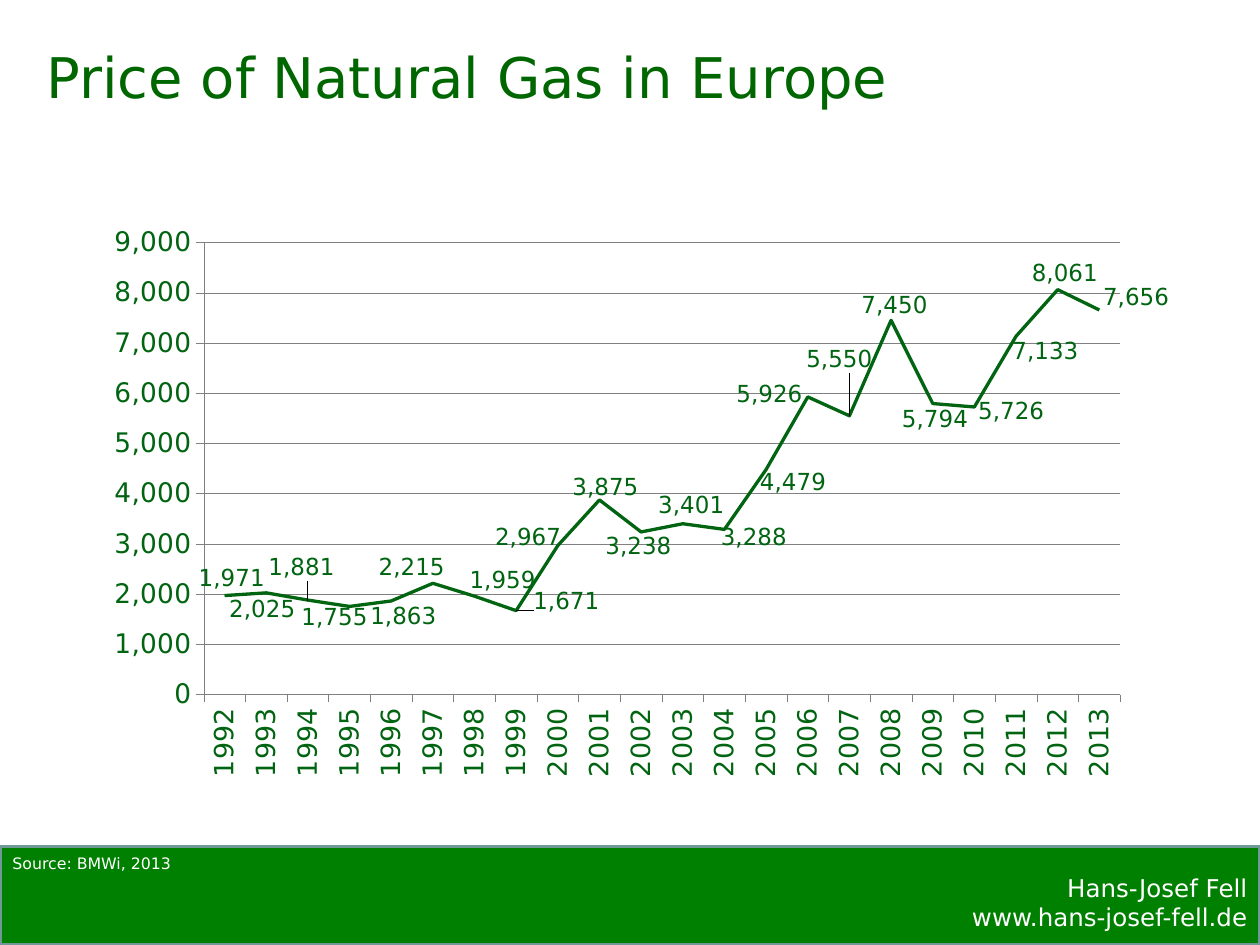
from lxml.etree import SubElement
from pptx import Presentation
from pptx.chart.data import CategoryChartData
from pptx.dml.color import RGBColor
from pptx.enum.chart import XL_CHART_TYPE as ChartType
from pptx.enum.chart import XL_LABEL_POSITION as LabelPosition
from pptx.enum.chart import XL_TICK_MARK as TickMark
from pptx.enum.shapes import MSO_SHAPE as Shape
from pptx.enum.text import MSO_ANCHOR as Anchor
from pptx.enum.text import PP_ALIGN as Align
from pptx.oxml.ns import qn
from pptx.util import Inches, Pt

COLORS = {"footer": "008000", "edge": "709897", "title": "006600",
          "line": "006411", "grid": "808080", "white": "FFFFFF"}
FIRST_YEAR = 1992
CHART_WIDTH, CHART_HEIGHT = 8.42, 4.42
PLOT_AREA = {"x": 0.092, "y": 0.027, "w": 0.884, "h": 0.813}
LABEL_REACH = 0.3  # from a point to the centre of a label on its right

# price, then the label's centre measured from its point, in inches
PRICES = [
    (1971, 0.05, -0.14), (2025, -0.04, 0.13), (1881, -0.06, -0.26),
    (1755, -0.13, 0.08), (1863, 0.09, 0.12), (2215, -0.18, -0.13),
    (1959, 0.22, -0.13), (1671, 0.4, -0.08), (2967, -0.25, -0.07),
    (3875, 0.04, -0.1), (3238, -0.03, 0.11), (3401, 0.06, -0.15),
    (3288, 0.23, 0.06), (4479, 0.21, 0.1), (5926, -0.32, -0.02),
    (5550, -0.09, -0.45), (7450, 0.02, -0.12), (5794, 0.01, 0.12),
    (5726, 0.29, 0.03), (7133, 0.23, 0.12), (8061, 0.05, -0.13),
    (7656, 0.29, -0.1),
]


def color(name):
    return RGBColor.from_string(COLORS[name])


def add_layout(after, inner=False, **fractions):
    """Place a chart part by hand, in fractions of the chart's size."""
    layout = after.makeelement(qn("c:layout"))
    after.addnext(layout)
    manual = SubElement(layout, qn("c:manualLayout"))
    if inner:
        SubElement(manual, qn("c:layoutTarget"), val="inner")
        for mode in ("xMode", "yMode"):
            SubElement(manual, qn(f"c:{mode}"), val="edge")
    for key, value in fractions.items():
        SubElement(manual, qn(f"c:{key}"), val=f"{value:.4f}")


class SlideBuilder:
    def __init__(self, page, font="DejaVu Sans"):
        self.page = page
        self.font = font

    def style(self, font, size, color_name):
        font.name = self.font
        font.size = Pt(size)
        font.bold = False
        font.color.rgb = color(color_name)

    def title(self, text, left, top, width, height):
        box = self.page.shapes.title
        box.left, box.top = Inches(left), Inches(top)
        box.width, box.height = Inches(width), Inches(height)
        frame = box.text_frame
        frame.text = text
        frame.vertical_anchor = Anchor.BOTTOM
        para = frame.paragraphs[0]
        para.alignment = Align.LEFT
        self.style(para.font, 32, "title")

    def bar(self, left, top, width, height):
        bar = self.page.shapes.add_shape(
            Shape.RECTANGLE, Inches(left), Inches(top), Inches(width), Inches(height))
        bar.shadow.inherit = False
        bar.fill.solid()
        bar.fill.fore_color.rgb = color("footer")
        bar.line.color.rgb = color("edge")
        bar.line.width = Pt(2)

    def text(self, text, left, top, width, height, size, align=Align.LEFT, wrap=True):
        box = self.page.shapes.add_textbox(
            Inches(left), Inches(top), Inches(width), Inches(height))
        frame = box.text_frame
        frame.word_wrap = wrap
        frame.text = text
        for para in frame.paragraphs:
            para.alignment = align
            self.style(para.font, size, "white")

    def axis(self, axis):
        axis.major_tick_mark = TickMark.OUTSIDE
        axis.minor_tick_mark = TickMark.NONE
        self.style(axis.tick_labels.font, 15.4, "line")
        axis.format.line.color.rgb = color("grid")
        axis.format.line.width = Pt(0.25)

    def line_chart(self, left, top):
        data = CategoryChartData(number_format="#,##0")
        data.categories = [str(FIRST_YEAR + i) for i in range(len(PRICES))]
        data.add_series("Series 1", [price for price, _, _ in PRICES])
        chart = self.page.shapes.add_chart(
            ChartType.LINE, Inches(left), Inches(top),
            Inches(CHART_WIDTH), Inches(CHART_HEIGHT), data).chart
        chart.has_legend = False
        chart.has_title = False
        chart.font.name = self.font
        plot_area = chart._chartSpace.chart.plotArea
        for layout in plot_area.findall(qn("c:layout")):
            plot_area.remove(layout)
        marker = plot_area.makeelement(qn("c:layout"))
        plot_area.insert(0, marker)
        add_layout(marker, inner=True, **PLOT_AREA)
        plot_area.remove(marker)

        years, values = chart.category_axis, chart.value_axis
        self.axis(years)
        self.axis(values)
        years._element.find(qn("c:txPr")).find(qn("a:bodyPr")).set("rot", "-5400000")
        values.minimum_scale, values.maximum_scale, values.major_unit = 0, 9000, 1000
        values.tick_labels.number_format = "#,##0"
        values.tick_labels.number_format_is_linked = False
        grid = values.major_gridlines.format.line
        grid.color.rgb = color("grid")
        grid.width = Pt(0.25)

        chart.plots[0].vary_by_categories = False
        series = chart.plots[0].series[0]
        series.smooth = False
        series.format.line.color.rgb = color("line")
        series.format.line.width = Pt(1.92)
        self.labels(series)

    def labels(self, series):
        labels = series.data_labels
        labels.show_value = True
        labels.number_format = "#,##0"
        labels.number_format_is_linked = False
        self.style(labels.font, 13.4, "line")
        for index in range(len(PRICES)):
            label = series.points[index].data_label
            self.style(label.font, 13.4, "line")
            label.position = LabelPosition.RIGHT
        for item, (_, across, down) in zip(series._element.iter(qn("c:dLbl")), PRICES):
            add_layout(item.find(qn("c:idx")), x=(across - LABEL_REACH) / CHART_WIDTH,
                       y=down / CHART_HEIGHT)


def main():
    deck = Presentation()
    deck.slide_width, deck.slide_height = Inches(10), Inches(7.5)
    slide = SlideBuilder(deck.slides.add_slide(deck.slide_layouts[5]))
    slide.bar(0, 6.72, 10, 0.78)
    slide.text("Hans-Josef Fell\nwww.hans-josef-fell.de", 5.94, 6.88, 4.06, 0.62, 14,
               align=Align.RIGHT)
    slide.title("Price of Natural Gas in Europe", 0.27, 0.28, 8.92, 0.64)
    slide.text("Source: BMWi, 2013", 0, 6.73, 1.51, 0.25, 9, wrap=False)
    slide.line_chart(0.86, 1.8)
    deck.save("out.pptx")


if __name__ == "__main__":
    main()
